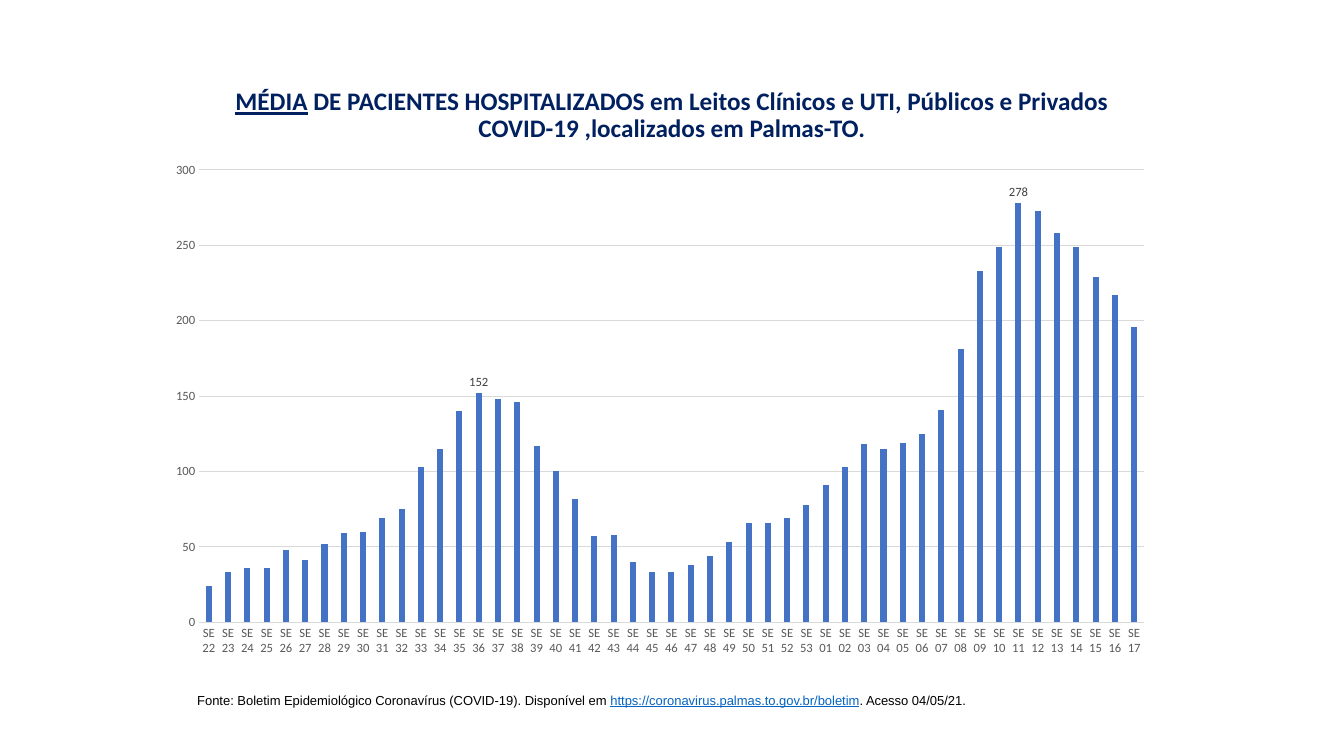
from lxml import etree
from pptx import Presentation
from pptx import util as u
from pptx.chart.data import CategoryChartData
from pptx.dml.color import RGBColor
from pptx.enum import chart as ch, text
from pptx.oxml.ns import qn

COLUMNS, ROWS = 160, 90

# Weekly averages: epidemiological weeks 22 to 53, then 1 to 17
WEEKS = [f"SE {week:02d}" for week in (*range(22, 54), *range(1, 18))]
AVERAGES = [
    24, 33, 36, 36, 48, 41, 52, 59, 60, 69, 75, 103, 115, 140, 152, 148, 146,
    117, 100, 82, 57, 58, 40, 33, 33, 38, 44, 53, 66, 66, 69, 78,
    91, 103, 118, 115, 119, 125, 141, 181, 233, 249, 278, 273, 258, 249, 229,
    217, 196,
]
PEAKS = [WEEKS.index("SE 36"), WEEKS.index("SE 11")]


def color(hex_code):
    return RGBColor.from_string(hex_code)


class SlideBuilder:
    navy, blue, link = "002060", "4472C4", "0563C1"
    black, gray, dark_gray, light_gray = "000000", "595959", "404040", "D9D9D9"
    heading_font, source_font = "Calibri", "Arial"

    def __init__(self, deck):
        self.deck = deck
        self.page = deck.slides.add_slide(deck.slide_layouts[5])

    def cells(self, left, top, width, height):
        across = self.deck.slide_width / COLUMNS
        down = self.deck.slide_height / ROWS
        return (int(left * across), int(top * down),
                int(width * across), int(height * down))

    def style(self, font, name, size, hex_code, bold=None, underline=None):
        font.name, font.size = name, u.Pt(size)
        font.color.rgb = color(hex_code)
        font.bold, font.underline = bold, underline

    def add_spans(self, para, parts, name, size, bold=None):
        for words, hex_code, underline in parts:
            span = para.add_run()
            span.text = words
            self.style(span.font, name, size, hex_code, bold, underline)

    def title(self, area, parts):
        box = self.page.shapes.title
        box.left, box.top, box.width, box.height = self.cells(*area)
        frame = box.text_frame
        frame.word_wrap = True
        frame.auto_size = text.MSO_AUTO_SIZE.NONE
        frame.vertical_anchor = text.MSO_ANCHOR.MIDDLE
        frame.margin_bottom = u.Inches(0.33)
        para = frame.paragraphs[0]
        para.alignment = text.PP_ALIGN.CENTER
        para.line_spacing = 0.9
        self.add_spans(para, parts, self.heading_font, 18, bold=True)

    def note(self, area, parts):
        box = self.page.shapes.add_textbox(*self.cells(*area))
        frame = box.text_frame
        frame.word_wrap = True
        frame.auto_size = text.MSO_AUTO_SIZE.SHAPE_TO_FIT_TEXT
        self.add_spans(frame.paragraphs[0], parts, self.source_font, 9.3)

    def column_chart(self, area, categories, values, labelled):
        data = CategoryChartData()
        data.categories = categories
        data.add_series("Series 1", values)
        chart = self.page.shapes.add_chart(
            ch.XL_CHART_TYPE.COLUMN_CLUSTERED, *self.cells(*area), data).chart
        chart.has_title = chart.has_legend = False
        self.style(chart.font, self.heading_font, 10, self.black)

        # Columns and the labels of the peaks
        plot = chart.plots[0]
        plot.gap_width, plot.overlap = 219, -27
        plot.vary_by_categories = False
        series = plot.series[0]
        series.format.fill.solid()
        series.format.fill.fore_color.rgb = color(self.blue)
        series.data_labels.show_value = False
        for index in labelled:
            label = series.points[index].data_label
            self.style(label.font, self.heading_font, 9, self.dark_gray)
            label.position = ch.XL_LABEL_POSITION.OUTSIDE_END

        # Axes and gridlines
        for axis in (chart.category_axis, chart.value_axis):
            axis.major_tick_mark = axis.minor_tick_mark = ch.XL_TICK_MARK.NONE
            self.style(axis.tick_labels.font, self.heading_font, 9, self.gray)
        grid = chart.value_axis.major_gridlines
        for line in (chart.category_axis.format.line, grid.format.line):
            line.color.rgb = color(self.light_gray)
            line.width = u.Pt(0.75)
        chart.value_axis.format.line.fill.background()
        chart.value_axis.minimum_scale = 0
        chart.value_axis.maximum_scale = 300
        chart.value_axis.major_unit = 50
        self.place_plot(chart, x=0.043, y=0.043, w=0.945, h=0.877)

    def place_plot(self, chart, **shares):
        plot_area = chart.plots[0]._element.getparent()
        for old in plot_area.findall(qn("c:layout")):
            plot_area.remove(old)
        layout = etree.Element(qn("c:layout"))
        manual = etree.SubElement(layout, qn("c:manualLayout"))
        settings = {"layoutTarget": "inner", "xMode": "edge", "yMode": "edge"}
        for tag, value in {**settings, **shares}.items():
            etree.SubElement(manual, qn(f"c:{tag}")).set("val", str(value))
        plot_area.insert(0, layout)


def main():
    deck = Presentation()
    deck.slide_width, deck.slide_height = u.Inches(13.34), u.Inches(7.5)
    slide = SlideBuilder(deck)

    # Heading
    slide.title((26, 8, 108, 15), [
        ("MÉDIA", slide.navy, True),
        (" DE PACIENTES HOSPITALIZADOS em Leitos Clínicos e UTI, Públicos e "
         "Privados COVID-19 ,localizados em Palmas-TO.", slide.navy, False),
    ])

    # Weekly averages
    slide.column_chart((18.6, 17.6, 119, 61.4), WEEKS, AVERAGES, PEAKS)

    # Source of the data
    slide.note((22.3, 81.8, 115.2, 3.1), [
        ("Fonte: Boletim Epidemiológico Coronavírus (COVID-19). "
         "Disponível em ", slide.black, False),
        ("https://coronavirus.palmas.to.gov.br/boletim", slide.link, True),
        (". Acesso 04/05/21.", slide.black, False),
    ])
    deck.save("out.pptx")


if __name__ == "__main__":
    main()
